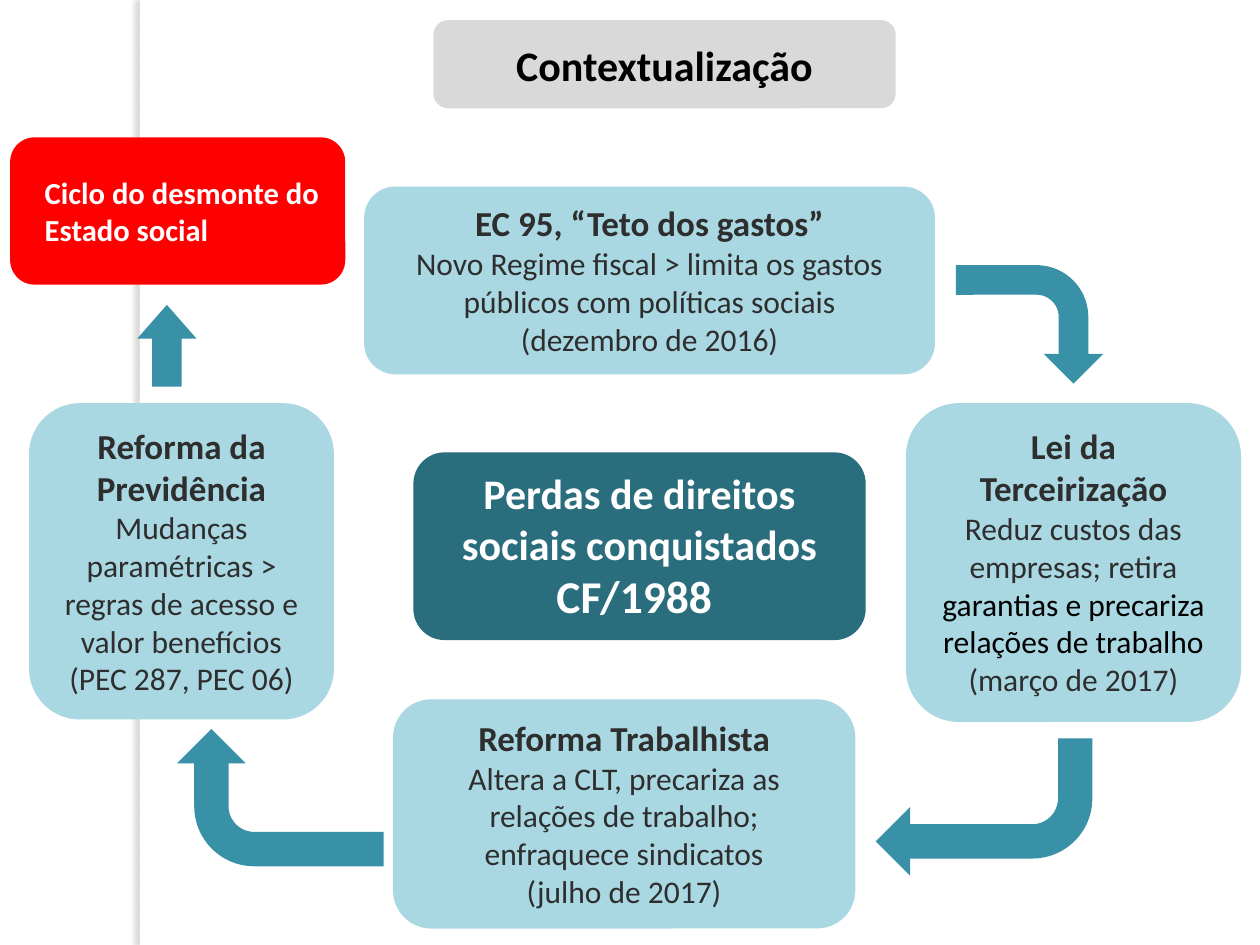
from lxml import etree
from pptx import Presentation
from pptx.dml.color import RGBColor
from pptx.enum.shapes import MSO_SHAPE
from pptx.enum.text import MSO_ANCHOR, MSO_AUTO_SIZE, PP_ALIGN
from pptx.oxml import parse_xml
from pptx.util import Pt

WHITE = RGBColor(0xFF, 0xFF, 0xFF)
BLACK = RGBColor(0, 0, 0)
GRAY = RGBColor(0xD9, 0xD9, 0xD9)
RED = RGBColor(0xFF, 0, 0)
PALE_BLUE = RGBColor(0xA9, 0xD7, 0xE2)
TEAL = RGBColor(0x38, 0x91, 0xA7)
DARK_TEAL = RGBColor(0x2A, 0x6D, 0x7D)
INK = RGBColor(0x2D, 0x2E, 0x2D)

# Run formats
HEAD = dict(size=20, bold=True, color=INK)
BODY = dict(size=18, color=INK)

# Box frames are (left, top, width, height); each paragraph is a list of (text, format)
TITLE = ((247.7, 11.5, 264.2, 50.4), GRAY,
         [[("Contextualização", dict(size=24, bold=True, color=BLACK))]])
CYCLE_LABEL = ((5.8, 78.5, 191.5, 84.2), RED,
               [[("Ciclo do desmonte do Estado social",
                  dict(size=17.5, bold=True, color=WHITE))]])
REFORMS = [
    ((208.1, 106.6, 326.2, 107.3), PALE_BLUE, [
        [("EC 95, “Teto dos gastos”", HEAD)],
        [("Novo Regime fiscal > limita os gastos públicos com políticas sociais\n"
          "(dezembro de 2016)", BODY)]]),
    ((16.6, 230.4, 174.2, 180.7), PALE_BLUE, [
        [("Reforma da Previdência", HEAD)],
        [("Mudanças paramétricas > regras de acesso e valor benefícios\n"
          "(PEC 287, PEC 06)", BODY)]]),
    ((224.6, 399.6, 264.2, 131), PALE_BLUE, [
        [("Reforma Trabalhista\n", HEAD),
         ("Altera a CLT, precariza as relações de trabalho; enfraquece sindicatos\n"
          "(julho de 2017)", BODY)]]),
    ((517.7, 230.4, 191.5, 182.2), PALE_BLUE, [
        [("Lei da Terceirização\n", HEAD),
         ("Reduz custos das empresas; retira ", BODY),
         ("garantias e precariza relações de trabalho", dict(size=18, color=BLACK))],
        [("(março de 2017)", BODY)]]),
]
LOSSES = ((236.2, 258.5, 258.5, 107.3), DARK_TEAL, [
    [("Perdas de direitos sociais conquistados ", dict(size=24, bold=True, color=WHITE)),
     ("CF/1988 ", dict(size=26, bold=True, color=WHITE))]])

# Frame before rotation, preset, rotation
ARROWS = [
    ((554.4, 143.3, 67.7, 84.2), MSO_SHAPE.BENT_ARROW, 90),
    ((500.4, 421.9, 123.8, 78.5), MSO_SHAPE.BENT_ARROW, 180),
    ((121, 396.7, 78.5, 118.1), MSO_SHAPE.BENT_ARROW, 270),
    ((72, 180.7, 46.8, 33.8), MSO_SHAPE.RIGHT_ARROW, 270),
]

BAR_FRAME = (79.9, 0, 5.8, 540)
BAR_SHADOW = """<a:effectLst xmlns:a="http://schemas.openxmlformats.org/drawingml/2006/main">
<a:outerShdw blurRad="38100" dist="38100" dir="10800000" algn="tl" rotWithShape="0">
<a:srgbClr val="736F63"><a:alpha val="25000"/></a:srgbClr></a:outerShdw></a:effectLst>"""

prs = Presentation()
prs.slide_width, prs.slide_height = Pt(720), Pt(540)
slide = prs.slides.add_slide(prs.slide_layouts[6])


def add_figure(preset, frame, fill):
    figure = slide.shapes.add_shape(preset, *(Pt(v) for v in frame))
    figure.shadow.inherit = False
    figure.fill.solid()
    figure.fill.fore_color.rgb = fill
    figure.line.fill.background()
    return figure


def add_text(paragraph, text, *, size, color, bold=False, font="Calibri"):
    for i, line in enumerate(text.split("\n")):
        if i:
            paragraph.add_line_break()
        if line:
            run = paragraph.add_run()
            run.text = line
            run.font.name = font
            run.font.size = Pt(size)
            run.font.bold = bold
            run.font.color.rgb = color


def add_box(frame, fill, paragraphs, grow=True, align=PP_ALIGN.CENTER):
    box = add_figure(MSO_SHAPE.ROUNDED_RECTANGLE, frame, fill)
    body = box.text_frame
    body.word_wrap = True
    body.vertical_anchor = MSO_ANCHOR.TOP if grow else MSO_ANCHOR.MIDDLE
    body.auto_size = MSO_AUTO_SIZE.SHAPE_TO_FIT_TEXT if grow else MSO_AUTO_SIZE.NONE
    for i, runs in enumerate(paragraphs):
        paragraph = body.add_paragraph() if i else body.paragraphs[0]
        paragraph.alignment = align
        for text, style in runs:
            add_text(paragraph, text, **style)
    return box


# Side bar with a soft shadow to its left
bar = add_figure(MSO_SHAPE.RECTANGLE, BAR_FRAME, WHITE)
bar.shadow.inherit = True
bar._element.spPr.append(parse_xml(BAR_SHADOW))

# Title and cycle label
add_box(*TITLE, grow=False)
label = add_box(*CYCLE_LABEL, grow=False, align=PP_ALIGN.LEFT)
label_paragraph = label.text_frame.paragraphs[0]
label_paragraph.level = 1
label_properties = label_paragraph._p.get_or_add_pPr()
label_properties.set("marL", str(Pt(8.6)))
label_properties.set("indent", "0")

# Reforms around the losses
for reform in REFORMS:
    add_box(*reform)
add_box(*LOSSES)

# Arrows of the cycle
for frame, preset, rotation in ARROWS:
    arrow = add_figure(preset, frame, TEAL)
    arrow.rotation = rotation
    if preset == MSO_SHAPE.RIGHT_ARROW:
        arrow.adjustments[1] = 0.57

prs.save("out.pptx")
